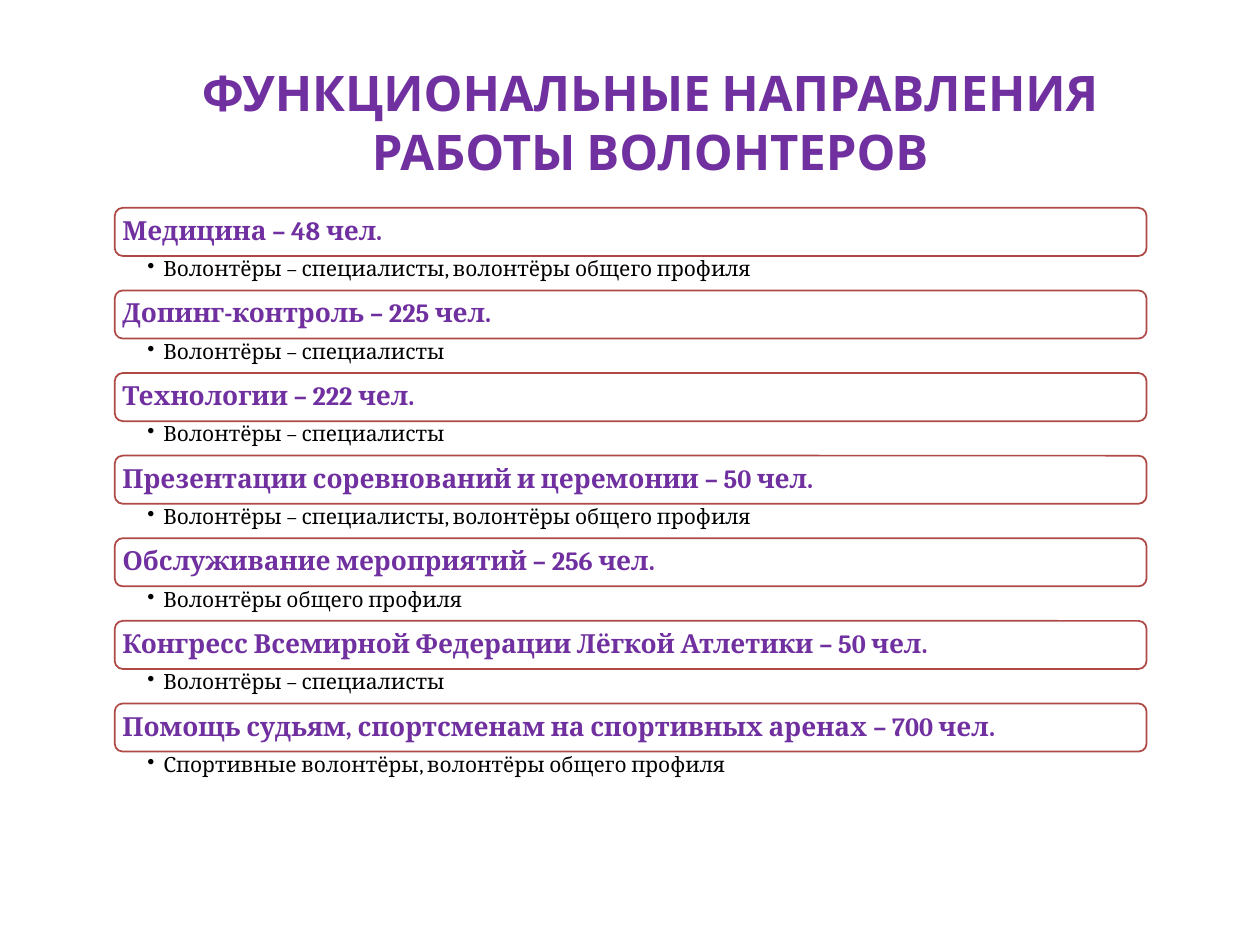
from typing import NamedTuple

from lxml import etree
from pptx import Presentation
from pptx.dml.color import RGBColor
from pptx.enum.shapes import MSO_SHAPE
from pptx.enum.text import MSO_ANCHOR, PP_ALIGN
from pptx.oxml.ns import qn
from pptx.util import Pt

ROUNDED = MSO_SHAPE.ROUNDED_RECTANGLE
MIDDLE, TOP = MSO_ANCHOR.MIDDLE, MSO_ANCHOR.TOP
CENTER, LEFT = PP_ALIGN.CENTER, PP_ALIGN.LEFT

PURPLE, RED, BLACK, WHITE = "7030A0", "AE4946", "000000", "FFFFFF"
LIST_LEFT, LIST_TOP, LIST_WIDTH = 65.6, 118.8, 589.6
ROW_PITCH, HEADING_HEIGHT = 47.2, 27.5
BULLET_INDENT = 9


class Direction(NamedTuple):
    heading: str
    volunteers: str


class TextStyle(NamedTuple):
    font: str
    size: float
    color: str
    bold: bool
    align: PP_ALIGN
    anchor: MSO_ANCHOR
    insets: tuple[float, float, float, float]
    spacing: float = 1.0
    bullet: bool = False


TITLE = TextStyle("Cabin", 28, PURPLE, True, CENTER, TOP, (7.2, 15.75, 7.2, 3.6))
HEADING = TextStyle("Cambria", 15, PURPLE, True, LEFT, MIDDLE, (3, 3, 3, 3), 0.9)
DETAIL = TextStyle("Cambria", 12, BLACK, False, LEFT, TOP, (18.7, 1.5, 8.5, 1.5), 0.9, True)

SPECIALISTS = "Волонтёры – специалисты"
MIXED = "Волонтёры – специалисты, волонтёры общего профиля"
DIRECTIONS = [
    Direction("Медицина – 48 чел.", MIXED),
    Direction("Допинг-контроль – 225 чел.", SPECIALISTS),
    Direction("Технологии – 222 чел.", SPECIALISTS),
    Direction("Презентации соревнований и церемонии – 50 чел.", MIXED),
    Direction("Обслуживание мероприятий – 256 чел.", "Волонтёры общего профиля"),
    Direction("Конгресс Всемирной Федерации Лёгкой Атлетики – 50 чел.", SPECIALISTS),
    Direction(
        "Помощь судьям, спортсменам на спортивных аренах – 700 чел.",
        "Спортивные волонтёры, волонтёры общего профиля",
    ),
]


def rgb(color: str) -> RGBColor:
    return RGBColor.from_string(color)


def add_bullet(para) -> None:
    para.level = 1
    properties = para._p.get_or_add_pPr()
    properties.set("marL", str(Pt(BULLET_INDENT)))
    properties.set("indent", str(-Pt(BULLET_INDENT)))
    etree.SubElement(properties, qn("a:buChar")).set("char", "•")


def write_text(shape, text: str, style: TextStyle) -> None:
    frame = shape.text_frame
    frame.word_wrap = True
    frame.vertical_anchor = style.anchor
    left, top, right, bottom = style.insets
    frame.margin_left, frame.margin_top = Pt(left), Pt(top)
    frame.margin_right, frame.margin_bottom = Pt(right), Pt(bottom)
    para = frame.paragraphs[0]
    para.text = text
    para.alignment = style.align
    para.line_spacing = style.spacing
    if style.bullet:
        add_bullet(para)
    para.font.name = style.font
    para.font.size = Pt(style.size)
    para.font.bold = style.bold
    para.font.color.rgb = rgb(style.color)


def add_text(page, left: float, top: float, width: float, height: float,
             text: str, style: TextStyle) -> None:
    box = page.shapes.add_textbox(Pt(left), Pt(top), Pt(width), Pt(height))
    write_text(box, text, style)


def add_direction(page, top: float, direction: Direction) -> None:
    box = page.shapes.add_shape(
        ROUNDED, Pt(LIST_LEFT), Pt(top), Pt(LIST_WIDTH), Pt(HEADING_HEIGHT))
    box.shadow.inherit = False
    box.fill.solid()
    box.fill.fore_color.rgb = rgb(WHITE)
    box.line.color.rgb = rgb(RED)
    box.line.width = Pt(1)
    write_text(box, direction.heading, HEADING)
    add_text(page, LIST_LEFT, top + HEADING_HEIGHT, LIST_WIDTH,
             ROW_PITCH - HEADING_HEIGHT, direction.volunteers, DETAIL)


def main() -> None:
    deck = Presentation()
    deck.slide_width, deck.slide_height = Pt(720), Pt(540)
    page = deck.slides.add_slide(deck.slide_layouts[6])
    add_text(page, 99.4, 20.2, 544.3, 87.1,
             "ФУНКЦИОНАЛЬНЫЕ НАПРАВЛЕНИЯ РАБОТЫ ВОЛОНТЕРОВ", TITLE)
    for row, direction in enumerate(DIRECTIONS):
        add_direction(page, LIST_TOP + row * ROW_PITCH, direction)
    deck.save("out.pptx")


if __name__ == "__main__":
    main()
